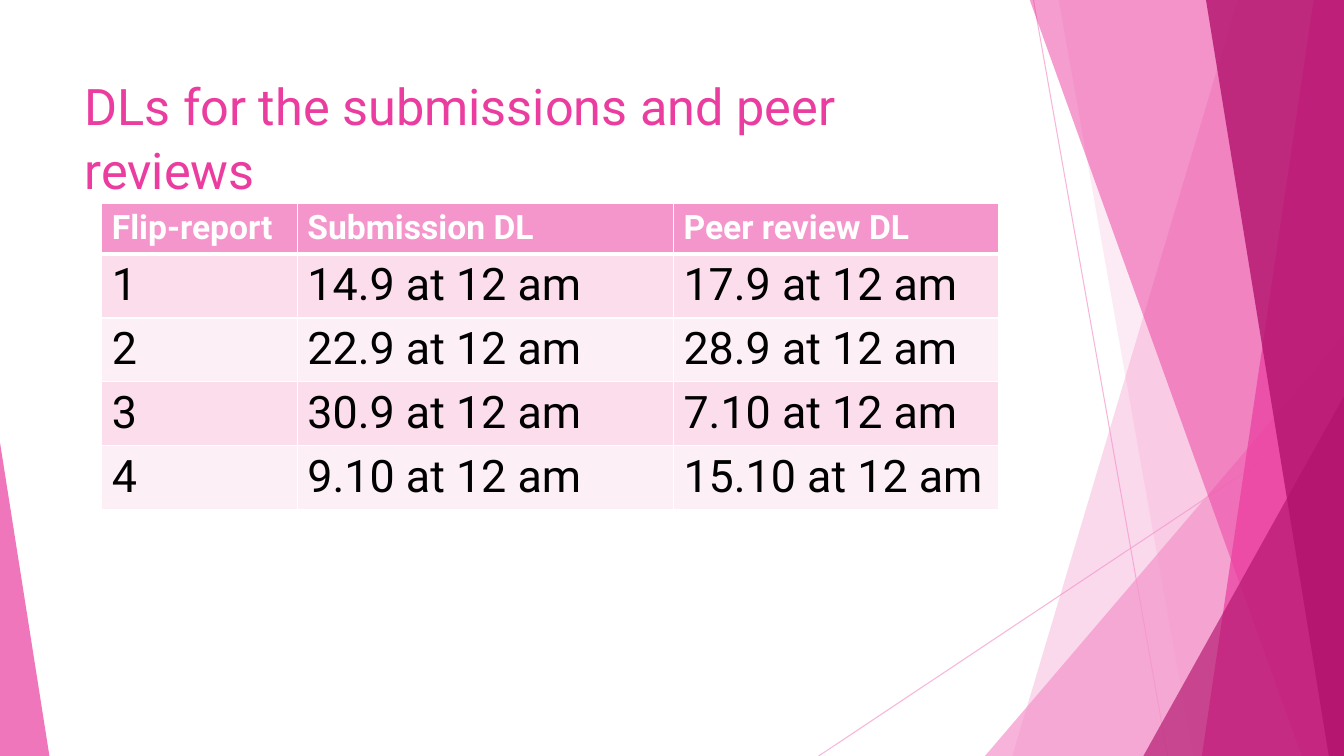
from pptx import Presentation
from pptx.dml.color import RGBColor
from pptx.enum.shapes import MSO_CONNECTOR as Conn, MSO_SHAPE as Shape
from pptx.enum.text import MSO_ANCHOR as Anchor
from pptx.oxml import parse_xml
from pptx.oxml.ns import nsdecls, qn
from pptx.oxml.xmlchemy import OxmlElement
from pptx.util import Pt

PX = 9144  # one px is a hundredth of an inch
WIDE, HIGH, TOP = 1333, 750, -1
FONT = "Roboto"
PALE, PINK, DARK, WHITE, BLACK = "F496CB", "EB3D9F", "B2136D", "FFFFFF", "000000"
BANDS = ["FBDDEC", "FDEFF6"]

TITLE = "DLs for the submissions and peer reviews"
ROWS = [
    ("Flip-report", "Submission DL", "Peer review DL"),
    ("1", "14.9 at 12 am", "17.9 at 12 am"),
    ("2", "22.9 at 12 am", "28.9 at 12 am"),
    ("3", "30.9 at 12 am", "7.10 at 12 am"),
    ("4", "9.10 at 12 am", "15.10 at 12 am"),
]
COLS = [194, 373, 322]
ROW = 41

# Rays: x1, y1, x2, y2
RAYS = [(1025, 0, 1158, HIGH), (WIDE, 403, 812, HIGH)]
# Facets, back to front: bands give top and bottom x of a slanted left edge
# that runs to the right side; triangles give left, top, width and apex.
FACETS = [
    ("band", (1228, 1004), PALE, 36),
    ("band", (1050, 1183), PALE, 20),
    ("tri", (977, 333, 356, 1), PALE, 72),
    ("band", (1021, 1291), PINK, 50),
    ("band", (1303, 1192), PINK, 70),
    ("band", (1196, 1318), DARK, 80),
    ("tri", (1134, 393, 199, 1), DARK, 66),
    ("tri", (0, 439, 49, 0), PINK, 70),
]


def px(*nums):
    return [n * PX for n in nums]


def paint(fill, tint, solid=100):
    fill.solid()
    fill.fore_color.rgb = RGBColor.from_string(tint)
    if solid < 100:
        clr = fill._xPr.find(qn("a:solidFill"))[0]
        alpha = OxmlElement("a:alpha")
        alpha.set("val", str(solid * 1000))
        clr.append(alpha)


def write(frame, text, size, tint, bold=False):
    para = frame.paragraphs[0]
    para.text = text
    para.font.name, para.font.size, para.font.bold = FONT, Pt(size), bold
    para.font.color.rgb = RGBColor.from_string(tint)
    return para


def edge(cell, row):
    props = cell._tc.get_or_add_tcPr()
    wide = {"T": 3 if row == 1 else 1, "B": 3 if row == 0 else 1}
    for i, side in enumerate("LRTB"):
        props.insert(i, parse_xml(
            f'<a:ln{side} {nsdecls("a")} w="{Pt(wide.get(side, 1))}">'
            f'<a:solidFill><a:srgbClr val="{WHITE}"/></a:solidFill></a:ln{side}>'))


deck = Presentation()
deck.slide_width, deck.slide_height = px(WIDE, HIGH)
slide = deck.slides.add_slide(deck.slide_layouts[6])
shapes = slide.shapes

# Thin rays
for ray in RAYS:
    line = shapes.add_connector(Conn.STRAIGHT, *px(*ray))
    line.line.width = Pt(0.75)
    paint(line.line.fill, PALE, 70)
    line._element.spPr.append(OxmlElement("a:effectLst"))

# Translucent facets
for kind, dims, tint, solid in FACETS:
    if kind == "band":
        top, foot = dims
        pen = shapes.build_freeform(top, TOP, scale=PX)
        pen.add_line_segments([(WIDE, TOP), (WIDE, HIGH), (foot, HIGH)])
        facet = pen.convert_to_shape()
    else:
        x, y, w, apex = dims
        facet = shapes.add_shape(Shape.ISOSCELES_TRIANGLE, *px(x, y, w, HIGH - y))
        facet.adjustments[0] = apex
    facet.shadow.inherit = False
    facet.line.fill.background()
    paint(facet.fill, tint, solid)

# Title
box = shapes.add_textbox(*px(74, 67, 940, 144)).text_frame
box.word_wrap = True
box.vertical_anchor = Anchor.TOP
write(box, TITLE, 36, PINK).line_spacing = 1.05

# Deadline table
size = px(101, 202, sum(COLS), ROW * len(ROWS))
table = shapes.add_table(len(ROWS), len(COLS), *size).table
for col, w in zip(table.columns, COLS):
    col.width = w * PX
for r, texts in enumerate(ROWS):
    table.rows[r].height = ROW * PX
    for c, text in enumerate(texts):
        cell = table.cell(r, c)
        if r == 0:
            paint(cell.fill, PALE)
            write(cell.text_frame, text, 24, WHITE, True)
        else:
            paint(cell.fill, BANDS[(r - 1) % 2])
            write(cell.text_frame, text, 32, BLACK)
        edge(cell, r)

deck.save("out.pptx")
